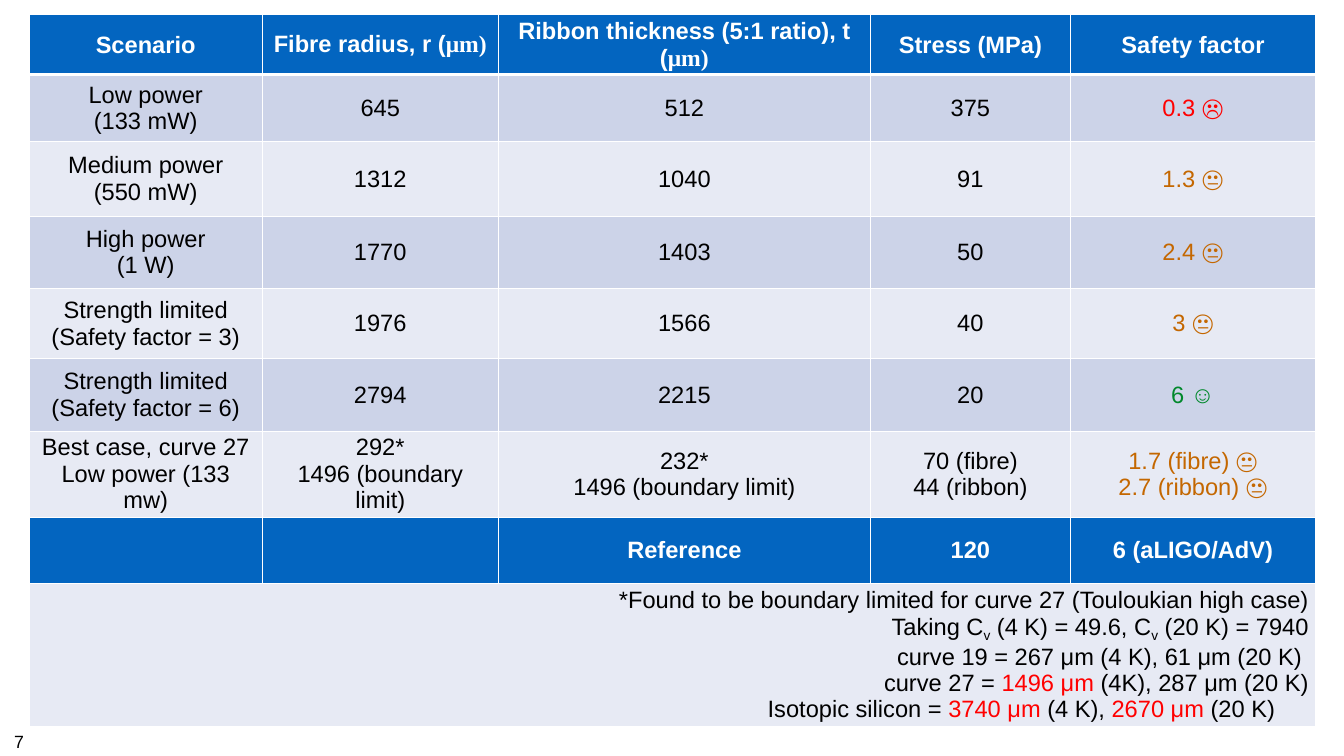
from dataclasses import dataclass

from lxml import etree
from pptx import Presentation
from pptx.dml.color import RGBColor
from pptx.enum.text import MSO_ANCHOR, PP_ALIGN
from pptx.oxml.ns import qn
from pptx.util import Inches, Pt

MIDDLE = MSO_ANCHOR.MIDDLE
LEFT, CENTER, RIGHT = PP_ALIGN.LEFT, PP_ALIGN.CENTER, PP_ALIGN.RIGHT
WHITE, BLACK, BLUE = "FFFFFF", "000000", "0365C0"
RED, AMBER, GREEN = "FF0000", "C46700", "00882B"
BANDS = ("E7EAF4", "CCD3E8")
SERIF = "Times New Roman"


@dataclass
class Bit:
    text: str
    color: str = BLACK
    font: str = "Arial"
    bold: bool = False
    sub: bool = False
    size: int = 24


@dataclass
class Case:
    name: str
    radius: str
    ribbon: str
    stress: str
    safety: str
    tone: str


# Table content; \v is a line break, \n a new paragraph
HEADS = [("Scenario", ""), ("Fibre radius, r (", "μm)"),
         ("Ribbon thickness (5:1 ratio), t (", "μm)"),
         ("Stress (MPa)", ""), ("Safety factor", "")]
CASES = [
    Case("Low power\n(133 mW)", "645", "512", "375", "0.3 ☹", RED),
    Case("Medium power\v(550 mW)", "1312", "1040", "91", "1.3 😐", AMBER),
    Case("High power\n(1 W)", "1770", "1403", "50", "2.4 😐", AMBER),
    Case("Strength limited\n(Safety factor = 3)", "1976", "1566", "40", "3 😐", AMBER),
    Case("Strength limited\n(Safety factor = 6)", "2794", "2215", "20", "6 ☺", GREEN),
    Case("Best case, curve 27\vLow power (133 mw)", "292*\v1496 (boundary limit)",
         "232*\v1496 (boundary limit)", "70 (fibre)\v44 (ribbon)",
         "1.7 (fibre) 😐\v2.7 (ribbon) 😐", AMBER),
]
TOTALS = ["", "", "Reference", "120", "6 (aLIGO/AdV)"]
NOTES = [
    [Bit("*Found to be boundary limited for curve 27 (Touloukian high case)")],
    [Bit("Taking C"), Bit("v", sub=True), Bit(" (4 K) = 49.6, C"), Bit("v", sub=True),
     Bit(" (20 K) = 7940\vcurve 19 = 267 μm (4 K), 61 μm (20 K) \vcurve 27 = "),
     Bit("1496 μm", RED), Bit(" (4K), 287 μm (20 K)")],
    [Bit("Isotopic silicon = "), Bit("3740 μm", RED), Bit(" (4 K), "),
     Bit("2670 μm", RED), Bit(" (20 K)")],
]
COLS = [3.29, 3.33, 5.25, 2.82, 3.46]
ROWS = [0.79, 0.94, 1.06, 1.02, 0.99, 1.02, 1.21, 0.94, 1.64]


def rgb(code: str) -> RGBColor:
    return RGBColor.from_string(code)


def add_bit(para, bit: Bit) -> None:
    for i, part in enumerate(bit.text.split("\v")):
        if i:
            para.add_line_break()
        run = para.add_run()
        run.text = part
        font = run.font
        font.size, font.name, font.bold = Pt(bit.size), bit.font, bit.bold
        font.color.rgb = rgb(bit.color)
        if bit.sub:
            font._element.set("baseline", "-25000")


def write(frame, paras: list[list[Bit]], align=CENTER) -> None:
    for i, bits in enumerate(paras):
        para = frame.add_paragraph() if i else frame.paragraphs[0]
        para.alignment = align
        for bit in bits:
            add_bit(para, bit)


def lines(text: str, color: str = BLACK, bold: bool = False) -> list[list[Bit]]:
    return [[Bit(part, color, bold=bold)] for part in text.split("\n") if part]


def style(cell, row: int, fill: str) -> None:
    cell.vertical_anchor = MIDDLE
    props = cell._tc.get_or_add_tcPr()
    for side in "LRTB":
        thick = (row, side) in ((0, "B"), (1, "T"))
        line = etree.SubElement(props, qn(f"a:ln{side}"), w=str(Pt(3 if thick else 1)))
        paint = etree.SubElement(line, qn("a:solidFill"))
        etree.SubElement(paint, qn("a:srgbClr"), val=WHITE)
    cell.fill.solid()
    cell.fill.fore_color.rgb = rgb(fill)


def add_grid(slide) -> None:
    frame = slide.shapes.add_table(len(ROWS), len(COLS), Inches(0.41), Inches(0.21),
                                   Inches(sum(COLS)), Inches(sum(ROWS)))
    table = frame.table
    table.first_row = table.horz_banding = False
    for col, width in zip(table.columns, COLS):
        col.width = Inches(width)
    last = len(ROWS) - 1
    for i, height in enumerate(ROWS):
        table.rows[i].height = Inches(height)
        fill = BLUE if i in (0, last - 1) else BANDS[i % 2]
        for cell in table.rows[i].cells:
            style(cell, i, fill)

    # Header row and reference row
    for j, (label, unit) in enumerate(HEADS):
        bits = [Bit(label, WHITE, bold=True)]
        if unit:
            bits.append(Bit(unit, WHITE, SERIF, True))
        write(table.cell(0, j).text_frame, [bits])
        write(table.cell(last - 1, j).text_frame, lines(TOTALS[j], WHITE, True))

    # Scenario rows
    for i, case in enumerate(CASES, 1):
        texts = (case.name, case.radius, case.ribbon, case.stress, case.safety)
        for j, text in enumerate(texts):
            tone = case.tone if j == len(COLS) - 1 else BLACK
            write(table.cell(i, j).text_frame, lines(text, tone))

    # Notes across the full width; the last line is indented from the left
    note = table.cell(last, 0)
    note.merge(table.cell(last, len(COLS) - 1))
    write(note.text_frame, NOTES, RIGHT)
    final = note.text_frame.paragraphs[-1]
    final.alignment = LEFT
    final._p.get_or_add_pPr().set("marL", str(Inches(10.32)))


def add_page(slide) -> None:
    box = slide.shapes.add_textbox(Inches(0), Inches(10.25), Inches(0.54), Inches(0.4))
    frame = box.text_frame
    frame.margin_left = frame.margin_right = Inches(0.06)
    frame.margin_top = frame.margin_bottom = Inches(0.06)
    frame.word_wrap = False
    write(frame, [[Bit("7", size=18)]])


def main() -> None:
    deck = Presentation()
    deck.slide_width, deck.slide_height = Inches(18.96), Inches(10.67)
    slide = deck.slides.add_slide(deck.slide_layouts[6])
    add_grid(slide)
    add_page(slide)
    deck.save("out.pptx")


if __name__ == "__main__":
    main()
